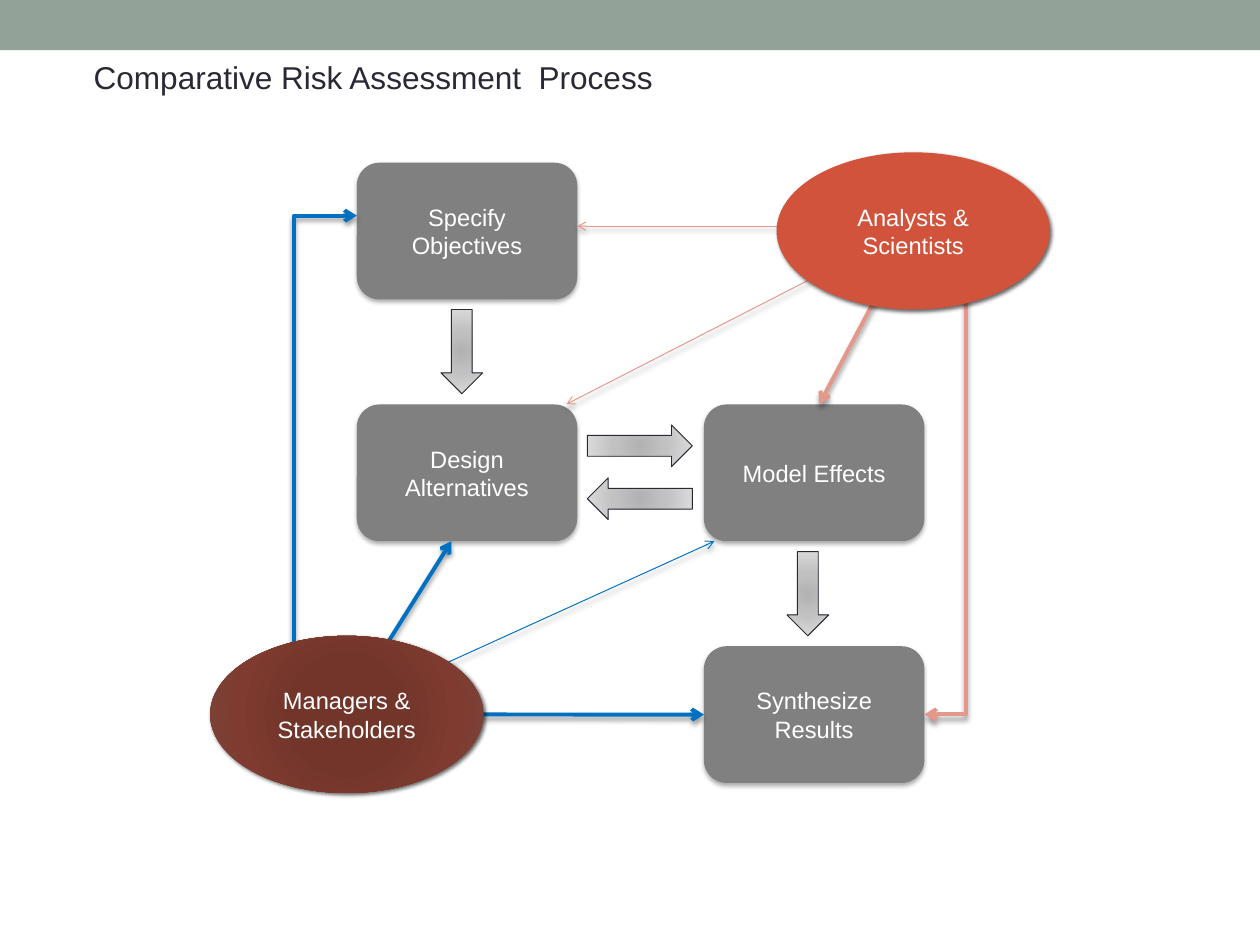
from dataclasses import dataclass

from lxml import etree
from pptx import Presentation
from pptx import util as u
from pptx.dml.color import RGBColor
from pptx.enum import shapes, text
from pptx.oxml import ns

COLORS = {
    "band": "93A299",
    "ink": "292934",
    "white": "FFFFFF",
    "step": "808080",
    "managers": "0070C0",
    "analysts": "E4988A",
    "analysts_fill": "D2533C",
}
FLOW_GRADIENT = ((0, "B2B2B3"), (45, "C1C1C2"), (100, "DDDDDE"))
MANAGERS_GRADIENT = ((0, "743327"), (34, "72352A"), (70, "7F3B2F"), (100, "79463D"))
FONT = "Arial"
STEP_WIDTH, STEP_HEIGHT = 5.92, 3.67
STEP_LEFT, STEP_TOP = 9.58, 4.37
COLUMN_PITCH, ROW_PITCH = 9.32, 6.49
GROUP_WIDTH, GROUP_HEIGHT = 7.34, 4.22
FLOW_LENGTH, FLOW_SPAN, FLOW_THICKNESS = 2.26, 2.82, 1.12
THICK, THIN = 3, 0.75


@dataclass(frozen=True)
class Shadow:
    opacity: int
    blur: float
    distance: float
    angle: int


@dataclass(frozen=True)
class Step:
    label: str
    column: int
    row: int


@dataclass(frozen=True)
class Group:
    label: str
    left: float
    top: float
    fill: str | tuple


@dataclass(frozen=True)
class Flow:
    kind: shapes.MSO_SHAPE
    left: float
    top: float


@dataclass(frozen=True)
class Link:
    color: str
    weight: float
    points: tuple
    target: str = ""


LINK_SHADOW = Shadow(40, 4, 3, 90)
STEP_SHADOW = Shadow(32, 3.5, 2.2, 90)
GROUP_SHADOW = Shadow(60, 3, 2, 45)

STEPS = (
    Step("Specify Objectives", 0, 0),
    Step("Design Alternatives", 0, 1),
    Step("Model Effects", 1, 1),
    Step("Synthesize Results", 1, 2),
)
GROUPS = (
    Group("Managers & Stakeholders", 5.64, 17.07, MANAGERS_GRADIENT),
    Group("Analysts & Scientists", 20.85, 4.09, COLORS["analysts_fill"]),
)
FLOWS = (
    Flow(shapes.MSO_SHAPE.DOWN_ARROW, 11.84, 8.31),
    Flow(shapes.MSO_SHAPE.RIGHT_ARROW, 15.77, 11.41),
    Flow(shapes.MSO_SHAPE.LEFT_ARROW, 15.77, 12.83),
    Flow(shapes.MSO_SHAPE.DOWN_ARROW, 21.13, 14.81),
)
LINKS = (
    Link("managers", THICK, ((9.3, 19.02), (12.12, 14.53))),
    Link("managers", THIN, ((9.3, 19.02), (19.18, 14.53))),
    Link("managers", THICK, ((12.12, 19.18), (18.9, 19.18)), "Synthesize Results"),
    Link("managers", THICK, ((7.9, 17.91), (7.9, 5.79), (9.58, 5.79))),
    Link("analysts", THIN, ((20.85, 6.07), (15.5, 6.07))),
    Link("analysts", THIN, ((24.54, 6.07), (15.21, 10.85))),
    Link("analysts", THICK, ((24.54, 6.07), (22, 10.85))),
    Link("analysts", THICK, ((25.93, 7.47), (25.93, 19.18), (24.82, 19.18))),
)


def set_shadow(shape, shadow: Shadow) -> None:
    properties = shape.element.spPr
    effects = properties.find(ns.qn("a:effectLst"))
    if effects is None:
        effects = etree.SubElement(properties, ns.qn("a:effectLst"))
    outer = etree.SubElement(
        effects, ns.qn("a:outerShdw"),
        blurRad=str(u.Pt(shadow.blur)), dist=str(u.Pt(shadow.distance)),
        dir=str(shadow.angle * 60000), rotWithShape="0")
    color = etree.SubElement(outer, ns.qn("a:srgbClr"), val="000000")
    etree.SubElement(color, ns.qn("a:alpha"), val=str(shadow.opacity * 1000))


def set_radial_fill(shape, stops: tuple) -> None:
    shape.fill.background()
    properties = shape.element.spPr
    gradient = etree.Element(ns.qn("a:gradFill"), rotWithShape="1")
    stop_list = etree.SubElement(gradient, ns.qn("a:gsLst"))
    for position, color in stops:
        stop = etree.SubElement(stop_list, ns.qn("a:gs"), pos=str(position * 1000))
        etree.SubElement(stop, ns.qn("a:srgbClr"), val=color)
    circle = etree.SubElement(gradient, ns.qn("a:path"), path="circle")
    etree.SubElement(circle, ns.qn("a:fillToRect"), l="50000", t="50000", r="50000", b="50000")
    properties.replace(properties.find(ns.qn("a:noFill")), gradient)


def add_box(slide, kind: shapes.MSO_SHAPE, left: float, top: float,
            width: float, height: float, fill: str | tuple):
    box = slide.shapes.add_shape(kind, u.Cm(left), u.Cm(top), u.Cm(width), u.Cm(height))
    box.shadow.inherit = False
    box.line.fill.background()
    if isinstance(fill, tuple):
        set_radial_fill(box, fill)
    else:
        box.fill.solid()
        box.fill.fore_color.rgb = RGBColor.from_string(fill)
    return box


def write(shape, content: str, size: float, color: str, align: text.PP_ALIGN) -> None:
    shape.text_frame.text = content
    paragraph = shape.text_frame.paragraphs[0]
    paragraph.alignment = align
    paragraph.font.name = FONT
    paragraph.font.size = u.Pt(size)
    paragraph.font.color.rgb = RGBColor.from_string(color)


def add_labelled(slide, kind: shapes.MSO_SHAPE, label: str, left: float, top: float,
                 width: float, height: float, fill: str | tuple, shadow: Shadow):
    box = add_box(slide, kind, left, top, width, height, fill)
    set_shadow(box, shadow)
    box.text_frame.vertical_anchor = text.MSO_ANCHOR.MIDDLE
    write(box, label, 18, COLORS["white"], text.PP_ALIGN.CENTER)
    return box


def add_step(slide, step: Step):
    return add_labelled(
        slide, shapes.MSO_SHAPE.ROUNDED_RECTANGLE, step.label,
        STEP_LEFT + step.column * COLUMN_PITCH, STEP_TOP + step.row * ROW_PITCH,
        STEP_WIDTH, STEP_HEIGHT, COLORS["step"], STEP_SHADOW)


def add_flow(slide, flow: Flow) -> None:
    size = (FLOW_SPAN, FLOW_THICKNESS)
    if flow.kind == shapes.MSO_SHAPE.DOWN_ARROW:
        size = (FLOW_THICKNESS, FLOW_LENGTH)
    arrow = add_box(slide, flow.kind, flow.left, flow.top, *size, FLOW_GRADIENT)
    arrow.line.color.rgb = RGBColor.from_string(COLORS["ink"])
    arrow.line.width = u.Pt(THIN)


def add_link(slide, link: Link, steps: dict) -> None:
    points = [(u.Cm(x), u.Cm(y)) for x, y in link.points]
    if len(points) == 2:
        arrow = slide.shapes.add_connector(shapes.MSO_CONNECTOR.STRAIGHT, *points[0], *points[1])
        if link.target:
            arrow.end_connect(steps[link.target], 1)
    else:
        route = slide.shapes.build_freeform(*points[0])
        route.add_line_segments(points[1:], close=False)
        arrow = route.convert_to_shape()
        arrow.fill.background()
        arrow.shadow.inherit = False
    arrow.line.color.rgb = RGBColor.from_string(COLORS[link.color])
    arrow.line.width = u.Pt(link.weight)
    outline = arrow.element.spPr.find(ns.qn("a:ln"))
    etree.SubElement(outline, ns.qn("a:tailEnd"), type="arrow")
    set_shadow(arrow, LINK_SHADOW)


def add_title(slide) -> None:
    title = slide.shapes.title
    title.left, title.top, title.width, title.height = map(u.Cm, (2.26, 1.42, 16.26, 1.27))
    title.text_frame.word_wrap = False
    title.text_frame.auto_size = text.MSO_AUTO_SIZE.NONE
    title.text_frame.vertical_anchor = text.MSO_ANCHOR.TOP
    write(title, "Comparative Risk Assessment  Process", 24, COLORS["ink"], text.PP_ALIGN.LEFT)


def main() -> None:
    deck = Presentation()
    deck.slide_width, deck.slide_height = u.Cm(33.83), u.Cm(25.37)
    slide = deck.slides.add_slide(deck.slide_layouts[5])
    add_title(slide)
    add_box(slide, shapes.MSO_SHAPE.RECTANGLE, 0, 0, 33.83, 1.35, COLORS["band"])
    steps = {step.label: add_step(slide, step) for step in STEPS}
    for flow in FLOWS:
        add_flow(slide, flow)
    for link in LINKS:
        add_link(slide, link, steps)
    for group in GROUPS:
        add_labelled(slide, shapes.MSO_SHAPE.OVAL, group.label, group.left, group.top,
                     GROUP_WIDTH, GROUP_HEIGHT, group.fill, GROUP_SHADOW)
    deck.save("out.pptx")


if __name__ == "__main__":
    main()
